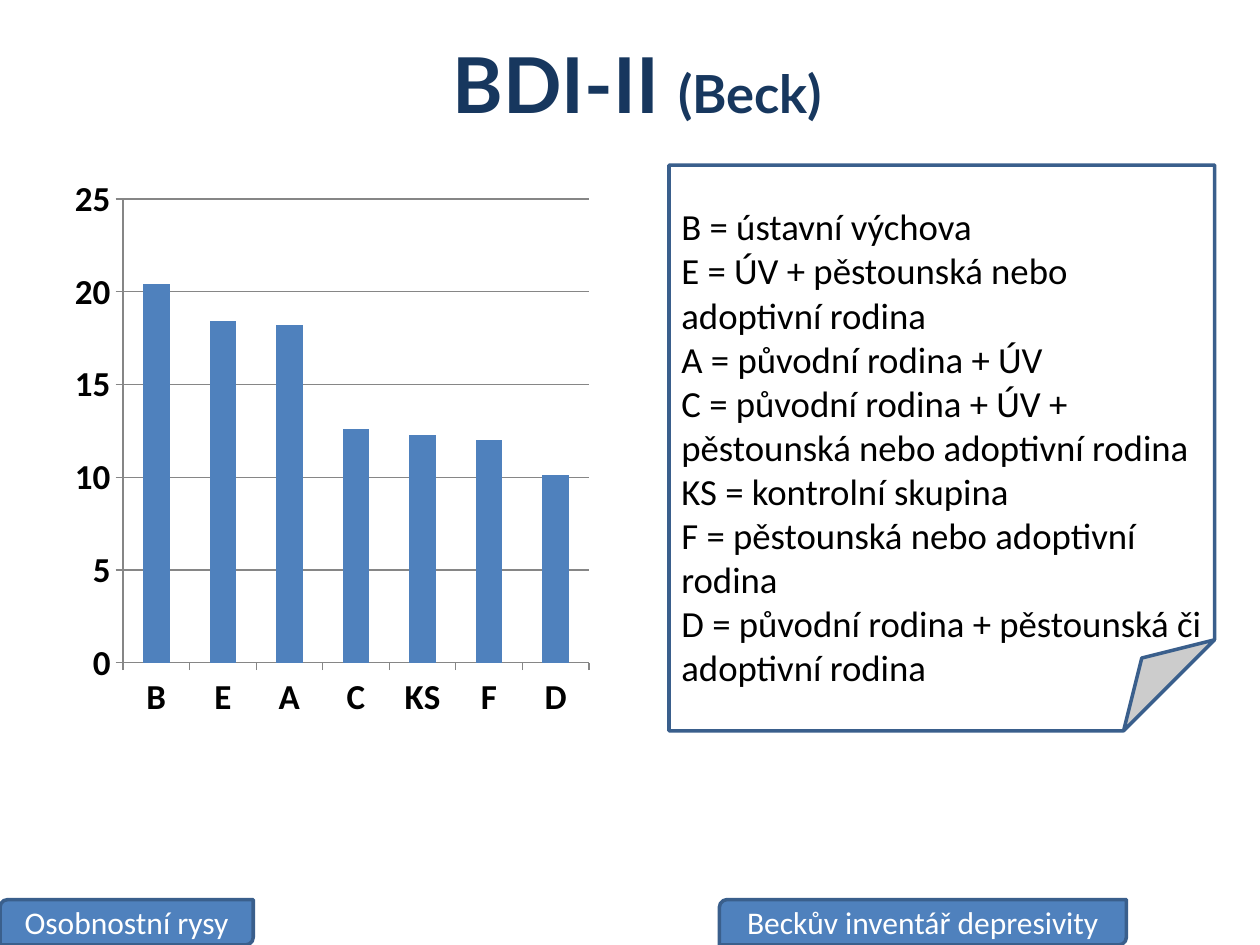
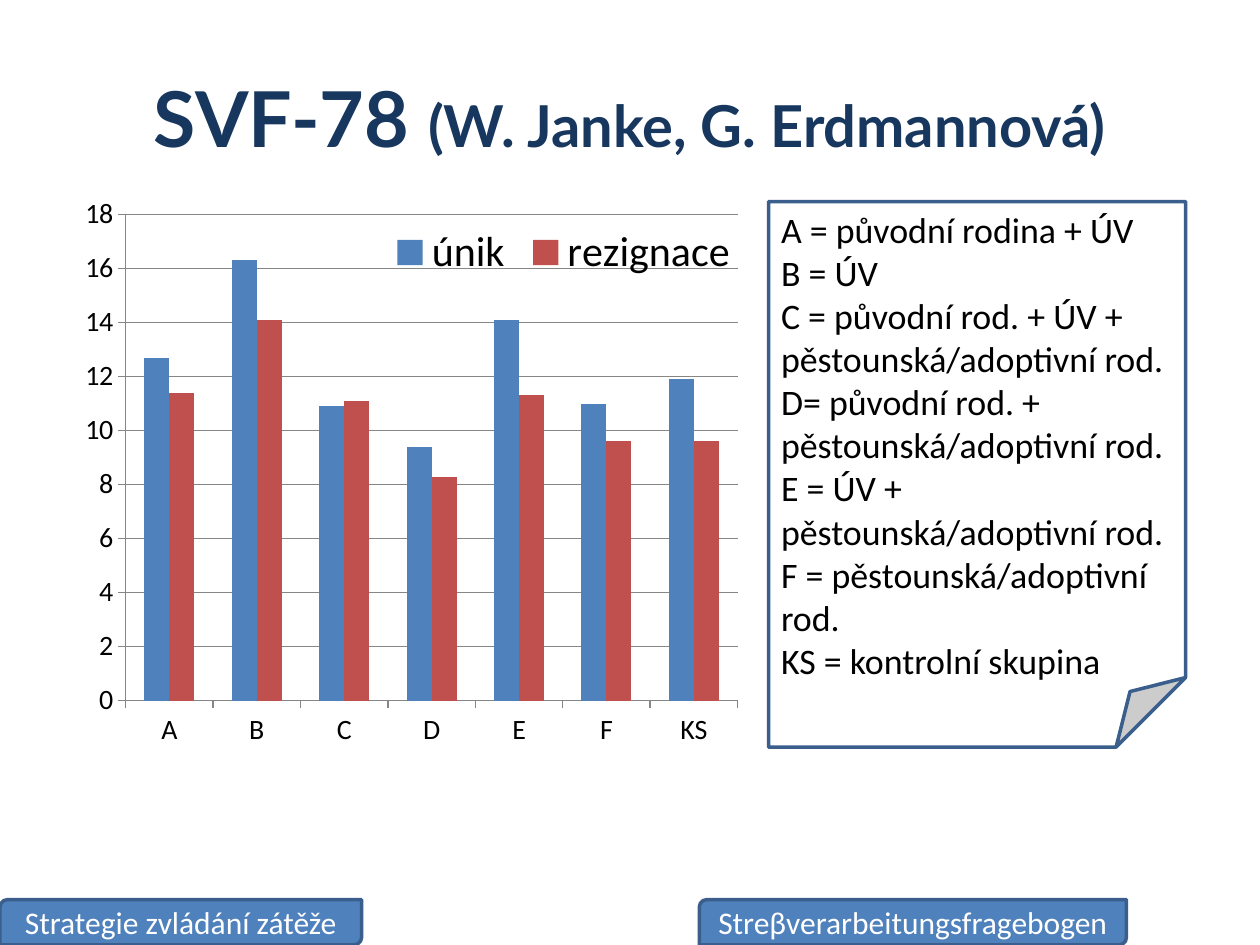
from dataclasses import dataclass

from lxml import etree
from pptx import Presentation
from pptx import util as u
from pptx.chart.data import CategoryChartData
from pptx.dml.color import RGBColor
from pptx.enum import chart as charts, shapes, text
from pptx.oxml import ns


@dataclass(frozen=True)
class Theme:
    title_font: str = "Lato"
    body_font: str = "Calibri"
    navy: str = "17375E"
    blue: str = "4F81BD"
    red: str = "C0504D"
    outline: str = "3A5F8C"
    grid: str = "868686"
    black: str = "000000"
    white: str = "FFFFFF"
    title_size: float = 44
    tab_size: float = 18
    legend_size: float = 24
    outline_width: float = 2


def place(left, top, width, height):
    return [u.Inches(value) for value in (left, top, width, height)]


def set_layout(element, before, x, y, w, h, inner=False):
    """Put a manual layout in a chart part, ahead of the first tag in before."""
    for old in element.findall(ns.qn("c:layout")):
        element.remove(old)
    layout = etree.Element(ns.qn("c:layout"))
    manual = etree.SubElement(layout, ns.qn("c:manualLayout"))
    settings = [("layoutTarget", "inner")] if inner else []
    settings += [("xMode", "edge"), ("yMode", "edge"),
                 ("x", x), ("y", y), ("w", w), ("h", h)]
    for tag, value in settings:
        etree.SubElement(manual, ns.qn(f"c:{tag}")).set("val", str(value))
    following = next(child for child in element
                     if child.tag in [ns.qn(f"c:{tag}") for tag in before])
    following.addprevious(layout)


class Deck:
    def __init__(self, theme):
        self.theme = theme
        self.presentation = Presentation()
        self.presentation.slide_width = u.Inches(10)
        self.presentation.slide_height = u.Inches(7.5)
        self.slide = None

    def style(self, font, size, color, name=None, bold=False):
        font.name = name or self.theme.body_font
        font.size = u.Pt(size)
        font.bold = bold
        font.color.rgb = RGBColor.from_string(color)

    def add_slide(self, box, test, author, author_size):
        layout = self.presentation.slide_layouts[5]
        self.slide = self.presentation.slides.add_slide(layout)
        title = self.slide.shapes.title
        title.left, title.top, title.width, title.height = place(*box)
        title.text_frame.vertical_anchor = text.MSO_ANCHOR.MIDDLE
        heading = title.text_frame.paragraphs[0]
        heading.alignment = text.PP_ALIGN.CENTER
        for words, size in ((test + " ", self.theme.title_size),
                            (author, author_size)):
            run = heading.add_run()
            run.text = words
            self.style(run.font, size, self.theme.navy,
                       self.theme.title_font, bold=True)

    def panel(self, preset, box, fill):
        panel = self.slide.shapes.add_shape(preset, *place(*box))
        panel.shadow.inherit = False
        panel.fill.solid()
        panel.fill.fore_color.rgb = RGBColor.from_string(fill)
        panel.line.color.rgb = RGBColor.from_string(self.theme.outline)
        panel.line.width = u.Pt(self.theme.outline_width)
        return panel.text_frame

    def add_lines(self, frame, lines, size, color, alignment):
        for index, line in enumerate(lines):
            paragraph = frame.add_paragraph() if index else frame.paragraphs[0]
            paragraph.alignment = alignment
            run = paragraph.add_run()
            run.text = line
            self.style(run.font, size, color)

    def group_key(self, box, groups, size, top_inset=0.05):
        frame = self.panel(shapes.MSO_SHAPE.FOLDED_CORNER, box, self.theme.white)
        frame.word_wrap = True
        frame.vertical_anchor = text.MSO_ANCHOR.TOP
        frame.margin_top = u.Inches(top_inset)
        self.add_lines(frame, groups, size, self.theme.black, text.PP_ALIGN.LEFT)

    def footer_tab(self, left, width, label):
        frame = self.panel(shapes.MSO_SHAPE.ROUND_2_DIAG_RECTANGLE,
                           (left, 7.14, width, 0.36), self.theme.blue)
        frame.word_wrap = False
        frame.vertical_anchor = text.MSO_ANCHOR.MIDDLE
        frame.margin_top = frame.margin_bottom = 0
        self.add_lines(frame, [label], self.theme.tab_size, self.theme.white,
                       text.PP_ALIGN.CENTER)

    def column_chart(self, box, plot_layout, groups, scores, top_score, step,
                     size, bold=False, legend_layout=None):
        data = CategoryChartData(number_format="0.0")
        data.categories = groups
        for scale, values in scores.items():
            data.add_series(scale, values)
        chart = self.slide.shapes.add_chart(
            charts.XL_CHART_TYPE.COLUMN_CLUSTERED, *place(*box), data).chart
        self.style(chart.font, size, self.theme.black, bold=bold)
        chart.has_title = False

        plot = chart.plots[0]
        plot.gap_width, plot.overlap = 150, 0
        plot.vary_by_categories = False
        for series, color in zip(plot.series, (self.theme.blue, self.theme.red)):
            series.format.fill.solid()
            series.format.fill.fore_color.rgb = RGBColor.from_string(color)

        score_axis = chart.value_axis
        score_axis.minimum_scale, score_axis.maximum_scale = 0, top_score
        score_axis.major_unit = step
        score_axis.has_major_gridlines = True
        score_axis.tick_labels.number_format = "0"
        score_axis.tick_labels.number_format_is_linked = False
        for axis in (score_axis, chart.category_axis):
            axis.major_tick_mark = charts.XL_TICK_MARK.OUTSIDE
        for ruled in (score_axis, chart.category_axis, score_axis.major_gridlines):
            ruled.format.line.color.rgb = RGBColor.from_string(self.theme.grid)
            ruled.format.line.width = u.Pt(0.75)

        plot_area = chart.element.find(".//" + ns.qn("c:plotArea"))
        set_layout(plot_area, ["barChart"], *plot_layout, inner=True)
        chart.has_legend = legend_layout is not None
        if legend_layout:
            legend = chart.legend
            legend.position = charts.XL_LEGEND_POSITION.RIGHT
            legend.include_in_layout = True
            self.style(legend.font, self.theme.legend_size, self.theme.black)
            set_layout(chart.element.find(".//" + ns.qn("c:legend")),
                       ["overlay", "spPr", "txPr"], *legend_layout)


def depression_slide(deck):
    deck.add_slide((0.56, -0.11, 9, 1.53), "BDI-II", "(Beck)", 30)
    deck.column_chart(
        (0.51, 1.31, 4.25, 4.49), (0.11, 0.06, 0.87, 0.82),
        ["B", "E", "A", "C", "KS", "F", "D"],
        {"Series 1": [20.4, 18.4, 18.2, 12.6, 12.3, 12, 10.1]},
        top_score=25, step=5, size=20, bold=True)
    deck.group_key((5.31, 1.31, 4.33, 4.49), [
        "B = ústavní výchova",
        "E = ÚV + pěstounská nebo adoptivní rodina",
        "A = původní rodina + ÚV",
        "C = původní rodina + ÚV + pěstounská nebo adoptivní rodina",
        "KS = kontrolní skupina",
        "F = pěstounská nebo adoptivní rodina",
        "D = původní rodina + pěstounská či adoptivní rodina",
    ], size=21, top_inset=0.31)
    deck.footer_tab(0, 2.01, "Osobnostní rysy")
    deck.footer_tab(5.71, 3.23, "Beckův inventář depresivity")


def coping_slide(deck):
    deck.add_slide((0.5, 0.3, 9, 1.25), "SVF-78", "(W. Janke, G. Erdmannová)", 33)
    deck.column_chart(
        (0.5, 1.47, 5.52, 4.65), (0.09, 0.05, 0.88, 0.83),
        ["A", "B", "C", "D", "E", "F", "KS"],
        {"únik": [12.7, 16.3, 10.9, 9.4, 14.1, 11, 11.9],
         "rezignace": [11.4, 14.1, 11.1, 8.3, 11.3, 9.6, 9.6]},
        top_score=18, step=2, size=16, legend_layout=(0.46, 0.06, 0.52, 0.11))
    deck.group_key((6.1, 1.6, 3.31, 4.33), [
        "A = původní rodina + ÚV",
        "B = ÚV",
        "C = původní rod. + ÚV + pěstounská/adoptivní rod.",
        "D= původní rod. + pěstounská/adoptivní rod.",
        "E = ÚV + pěstounská/adoptivní rod.",
        "F = pěstounská/adoptivní rod.",
        "KS = kontrolní skupina",
    ], size=20.5)
    deck.footer_tab(0, 2.87, "Strategie zvládání zátěže")
    deck.footer_tab(5.55, 3.39, "Streβverarbeitungsfragebogen")


def main():
    deck = Deck(Theme())
    depression_slide(deck)
    coping_slide(deck)
    deck.presentation.save("out.pptx")


if __name__ == "__main__":
    main()
